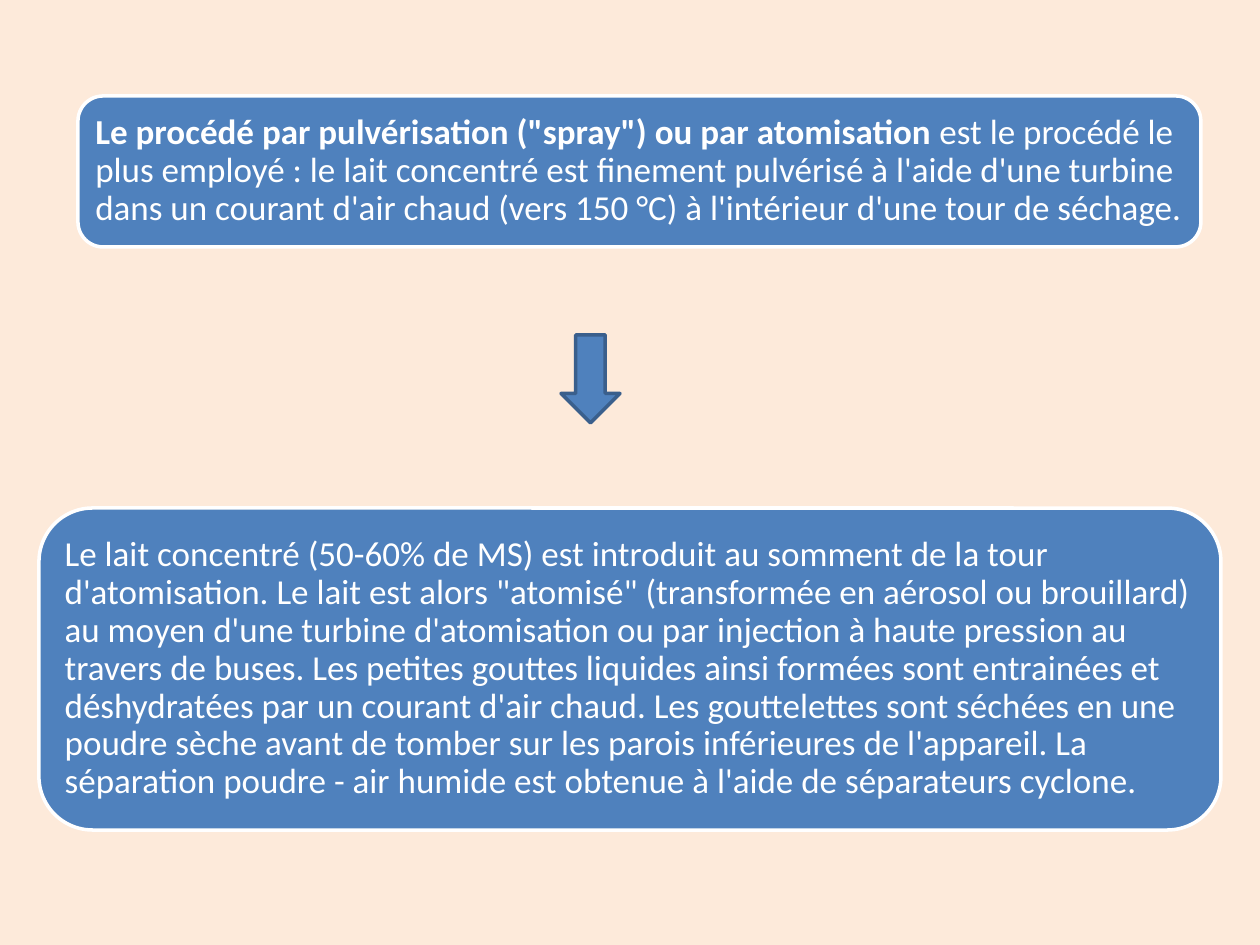
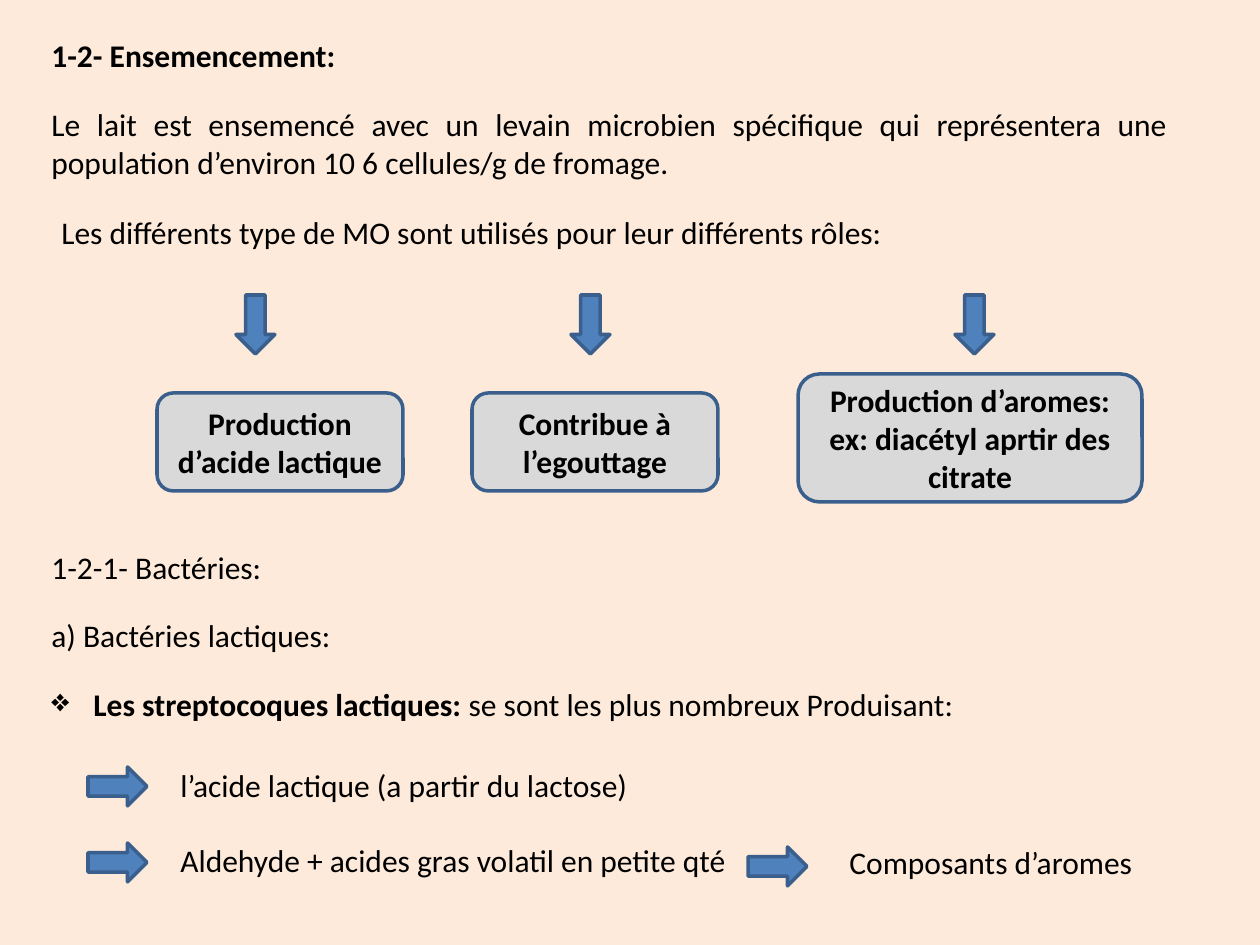
from lxml import etree
from pptx import Presentation
from pptx.dml.color import RGBColor
from pptx.enum.shapes import MSO_SHAPE as Shape
from pptx.enum.text import MSO_ANCHOR as Anchor, PP_ALIGN as Align
from pptx.oxml.ns import qn
from pptx.util import Emu, Pt

PX_PER_INCH = 126
CREAM = RGBColor(0xFD, 0xEA, 0xDA)
BLUE = RGBColor(0x4F, 0x81, 0xBD)
NAVY = RGBColor(0x3A, 0x5F, 0x8C)
GREY = RGBColor(0xD9, 0xD9, 0xD9)
WHITE = RGBColor(0xFF, 0xFF, 0xFF)
BLACK = RGBColor(0, 0, 0)
FONT = "Calibri"
ARROW_LENGTH, ARROW_WIDTH = 59, 39
LINE_HEIGHT = 50

SPRAY = [
    ('Le procédé par pulvérisation ("spray") ou par atomisation ', True),
    ("est le procédé le plus employé : le lait concentré est finement pulvérisé à l'aide d'une "
     "turbine dans un courant d'air chaud (vers 150 °C) à l'intérieur d'une tour de séchage.", False),
]
TOWER = [
    ("Le lait concentré (50-60% de MS) est introduit au somment de la tour d'atomisation. "
     "Le lait est alors \"atomisé\" (transformée en aérosol ou brouillard) au moyen d'une turbine "
     "d'atomisation ou par injection à haute pression au travers de buses. Les petites gouttes "
     "liquides ainsi formées sont entrainées et déshydratées par un courant d'air chaud. "
     "Les gouttelettes sont séchées en une poudre sèche avant de tomber sur les parois "
     "inférieures de l'appareil. La séparation poudre - air humide est obtenue à l'aide de "
     "séparateurs cyclone.", False),
]
LEVAIN = ("Le lait est ensemencé avec un levain microbien spécifique qui représentera une "
          "population d’environ 10 6 cellules/g de fromage.")
ROLES = [
    (236, (157, 393, 246, 98), "Production d’acide lactique"),
    (571, (472, 393, 246, 98), "Contribue à l’egouttage"),
    (955, (798, 374, 344, 128), "Production d’aromes: ex: diacétyl aprtir des citrate"),
]
PRODUCTS = [
    ((88, 767), (168, 760, 847), "l’acide lactique (a partir du lactose)"),
    ((88, 843), (168, 835, 847), "Aldehyde + acides gras volatil en petite qté"),
    ((748, 847), (837, 837, 344), "Composants d’aromes"),
]


def px(length):
    """Turn px into EMU."""
    return Emu(round(length * 914400 / PX_PER_INCH))


def apply(target, **values):
    """Set each attribute of the target."""
    for name, value in values.items():
        setattr(target, name, value)


def write(frame, spans, size=18, color=BLACK, align=Align.LEFT, spacing=1.0, **frame_format):
    """Write one paragraph of (text, bold) spans and return it."""
    apply(frame, word_wrap=True, **frame_format)
    para = frame.paragraphs[0]
    apply(para, alignment=align, line_spacing=spacing)
    for text, bold in spans:
        span = para.add_run()
        span.text = text
        apply(span.font, name=FONT, size=Pt(size), bold=bold)
        span.font.color.rgb = color
    return para


def add_figure(page, kind, box, fill=BLUE, line=NAVY):
    """Add a filled, outlined preset shape."""
    figure = page.shapes.add_shape(kind, *map(px, box))
    figure.shadow.inherit = False
    figure.fill.solid()
    figure.fill.fore_color.rgb = fill
    figure.line.color.rgb = line
    figure.line.width = Pt(2)
    return figure


def add_line(page, left, top, width, spans, height=LINE_HEIGHT, **text_format):
    """Add a free text line and return its paragraph."""
    area = page.shapes.add_textbox(*map(px, (left, top, width, height)))
    return write(area.text_frame, spans, **text_format)


def add_bullet(para, mark, indent):
    """Give the paragraph a hanging bullet mark."""
    properties = para._p.get_or_add_pPr()
    properties.set("marL", str(px(indent)))
    properties.set("indent", str(-px(indent)))
    etree.SubElement(properties, qn("a:buChar")).set("char", mark)


def add_panel(page, box, spans):
    """Add a blue panel holding a long white text."""
    panel = add_figure(page, Shape.ROUNDED_RECTANGLE, box, line=WHITE)
    inset = px(10)
    write(panel.text_frame, spans, size=20, color=WHITE, spacing=0.9,
          vertical_anchor=Anchor.MIDDLE, margin_left=inset, margin_right=inset,
          margin_top=inset, margin_bottom=inset)


def add_role(page, arrow_left, box, text):
    """Add a grey role box and the arrow that leads to it."""
    add_figure(page, Shape.DOWN_ARROW, (arrow_left, 295, ARROW_WIDTH, ARROW_LENGTH))
    role = add_figure(page, Shape.ROUNDED_RECTANGLE, box, fill=GREY)
    write(role.text_frame, [(text, True)], align=Align.CENTER, vertical_anchor=Anchor.MIDDLE)


def add_product(page, arrow_at, text_at, text):
    """Add a right arrow and the product it points to."""
    add_figure(page, Shape.RIGHT_ARROW, (*arrow_at, ARROW_LENGTH, ARROW_WIDTH))
    add_line(page, *text_at, [(text, False)])


def add_page(deck):
    """Add a blank cream page."""
    page = deck.slides.add_slide(deck.slide_layouts[6])
    page.background.fill.solid()
    page.background.fill.fore_color.rgb = CREAM
    return page


def build_spray(deck):
    """Build the spray drying page."""
    page = add_page(deck)
    add_panel(page, (78, 96, 1123, 151), SPRAY)
    add_panel(page, (39, 508, 1182, 322), TOWER)
    add_figure(page, Shape.DOWN_ARROW, (561, 335, 59, 88))


def build_seeding(deck):
    """Build the seeding page."""
    page = add_page(deck)
    left = 39
    add_line(page, left, 30, 344, [("1-2- Ensemencement:", True)])
    add_line(page, left, 99, 1141, [(LEVAIN, False)], height=89, align=Align.JUSTIFY)
    add_line(page, 49, 207, 945,
             [("Les différents type de MO sont utilisés pour leur différents rôles:", False)])
    for role in ROLES:
        add_role(page, *role)
    add_line(page, left, 542, 266, [("1-2-1- Bactéries:", False)])
    add_line(page, left, 610, 344, [("a) Bactéries lactiques:", False)])
    streptococci = add_line(page, left, 679, 1102, [
        ("Les streptocoques lactiques: ", True),
        ("se sont les plus nombreux Produisant:", False)])
    add_bullet(streptococci, "❖", 42)
    for product in PRODUCTS:
        add_product(page, *product)


def main():
    """Build and save the deck."""
    deck = Presentation()
    apply(deck, slide_width=px(1260), slide_height=px(945))
    build_spray(deck)
    build_seeding(deck)
    deck.save("out.pptx")


if __name__ == "__main__":
    main()
